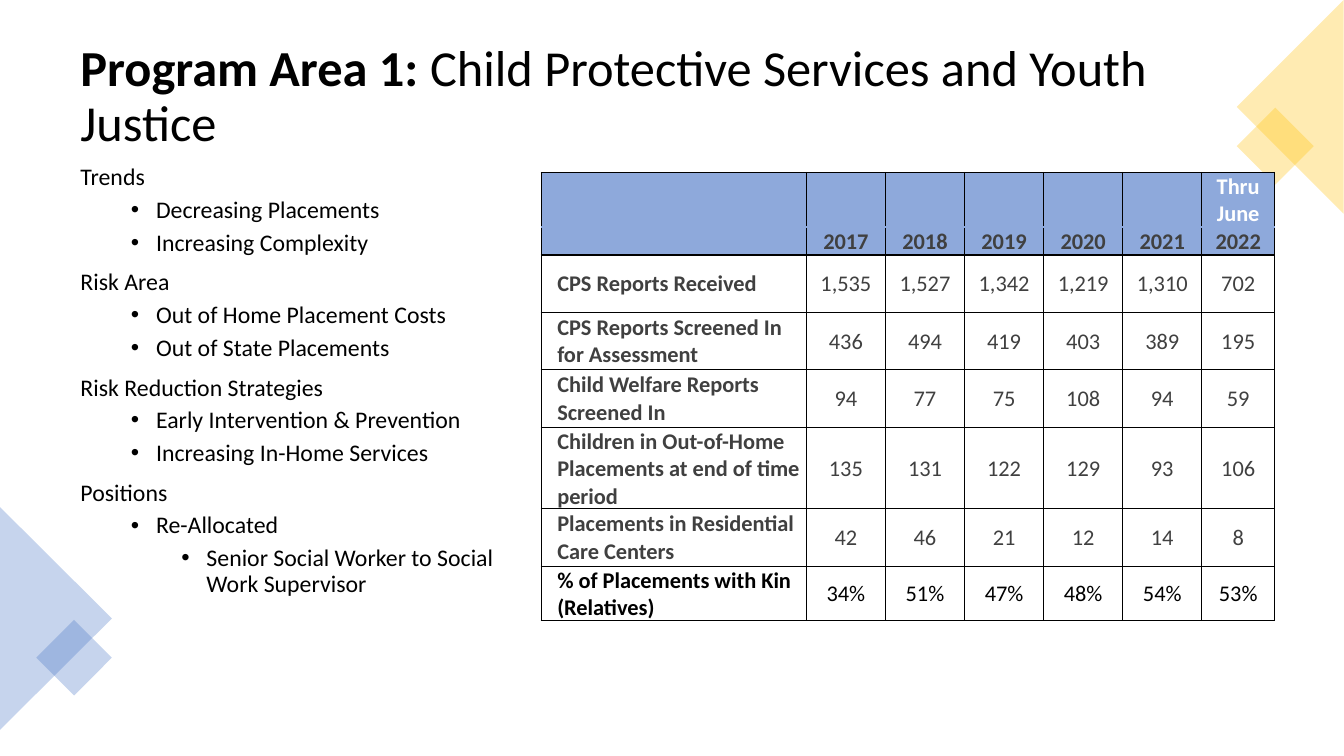
import pptx
import pptx.dml.color
import pptx.enum.shapes
import pptx.enum.text
import pptx.oxml
import pptx.oxml.ns
import pptx.util
from lxml import etree

Pt = pptx.util.Pt
Align = pptx.enum.text.PP_ALIGN
Anchor = pptx.enum.text.MSO_ANCHOR
Preset = pptx.enum.shapes.MSO_SHAPE
qn = pptx.oxml.ns.qn

BLACK, GREY, WHITE = "000000", "404040", "FFFFFF"
BLUE, GOLD, HEADER = "4472C4", "FFC000", "8EA9DB"

OUTLINE = [
    (0, "Trends"),
    (1, "Decreasing Placements"),
    (1, "Increasing Complexity"),
    (0, "Risk Area"),
    (1, "Out of Home Placement Costs"),
    (1, "Out of State Placements"),
    (0, "Risk Reduction Strategies"),
    (1, "Early Intervention & Prevention"),
    (1, "Increasing In-Home Services"),
    (0, "Positions"),
    (1, "Re-Allocated"),
    (2, "Senior Social Worker to Social Work Supervisor"),
]

TABLE_ROWS = [
    ["", "", "", "", "", "", "Thru June"],
    ["", "2017", "2018", "2019", "2020", "2021", "2022"],
    ["CPS Reports Received", "1,535", "1,527", "1,342", "1,219", "1,310", "702"],
    ["CPS Reports Screened In for Assessment", "436", "494", "419", "403", "389", "195"],
    ["Child Welfare Reports Screened In", "94", "77", "75", "108", "94", "59"],
    ["Children in Out-of-Home Placements at end of time period",
     "135", "131", "122", "129", "93", "106"],
    ["Placements in Residential Care Centers", "42", "46", "21", "12", "14", "8"],
    ["% of Placements with Kin (Relatives)", "34%", "51%", "47%", "48%", "54%", "53%"],
]
COLUMN_WIDTHS = [189.4] + [56.5] * 5 + [52]
ROW_HEIGHTS = [36, 19, 41, 41, 41, 54, 41, 29]
HEADER_ROWS = 2


def color(hex_value):
    return pptx.dml.color.RGBColor.from_string(hex_value)


def apply(target, **values):
    for name, value in values.items():
        setattr(target, name, value)


class SlideBuilder:
    font_name = "Calibri"

    def __init__(self, slide):
        self.slide = slide

    def run(self, paragraph, text, size, hex_value=BLACK, bold=False):
        run = paragraph.add_run()
        run.text = text
        apply(run.font, name=self.font_name, size=Pt(size), bold=bold)
        run.font.color.rgb = color(hex_value)

    def text_frame(self, left, top, width, height, anchor):
        box = self.slide.shapes.add_textbox(Pt(left), Pt(top), Pt(width), Pt(height))
        apply(box.text_frame, word_wrap=True, vertical_anchor=anchor)
        return box.text_frame

    def title(self, bounds, lead, rest):
        paragraph = self.text_frame(*bounds, Anchor.MIDDLE).paragraphs[0]
        paragraph.line_spacing = 0.9
        self.run(paragraph, lead, 36, bold=True)
        self.run(paragraph, rest, 36)

    def outline(self, bounds, items):
        frame = self.text_frame(*bounds, Anchor.TOP)
        for index, (level, text) in enumerate(items):
            paragraph = frame.add_paragraph() if index else frame.paragraphs[0]
            apply(paragraph, level=level, line_spacing=0.9,
                  space_before=Pt(5 if level else 10))
            if level:
                properties = paragraph._p.get_or_add_pPr()
                properties.set("marL", str(Pt(18 + 36 * level)))
                properties.set("indent", str(-Pt(18)))
                etree.SubElement(properties, qn("a:buFont")).set("typeface", "Arial")
                etree.SubElement(properties, qn("a:buChar")).set("char", "•")
            self.run(paragraph, text, 17)

    def corner_shape(self, preset, bounds, rotation, hex_value):
        """Draw a borderless, 30% opaque decoration."""
        shape = self.slide.shapes.add_shape(preset, *map(Pt, bounds))
        shape.rotation = rotation
        shape.shadow.inherit = False
        shape.line.fill.background()
        shape.fill.solid()
        shape.fill.fore_color.rgb = color(hex_value)
        fill_color = shape._element.spPr.find(".//" + qn("a:srgbClr"))
        etree.SubElement(fill_color, qn("a:alpha")).set("val", "30000")

    def border(self, cell, side, hex_value, width):
        line = etree.SubElement(cell._tc.get_or_add_tcPr(), qn("a:ln" + side))
        line.set("w", str(Pt(width)))
        fill = etree.SubElement(line, qn("a:solidFill"))
        etree.SubElement(fill, qn("a:srgbClr")).set("val", hex_value)

    def table(self, left, top, rows, widths, heights):
        frame = self.slide.shapes.add_table(
            len(rows), len(widths), Pt(left), Pt(top), Pt(sum(widths)), Pt(sum(heights)))
        table = frame.table
        apply(table, first_row=False, horz_banding=False)
        for column, width in zip(table.columns, widths):
            column.width = Pt(width)
        for row, height in zip(table.rows, heights):
            row.height = Pt(height)

        last_row, last_column = len(rows), len(widths)

        def vertical_edge(index):
            return BLACK, 1 if index in (0, last_column) else 0.5

        def horizontal_edge(index):
            heavy = index <= HEADER_ROWS or index == last_row
            return HEADER if index == 1 else BLACK, 1 if heavy else 0.5

        for i, texts in enumerate(rows):
            for j, text in enumerate(texts):
                cell = table.cell(i, j)
                self.border(cell, "L", *vertical_edge(j))
                self.border(cell, "R", *vertical_edge(j + 1))
                self.border(cell, "T", *horizontal_edge(i))
                self.border(cell, "B", *horizontal_edge(i + 1))
                self.fill_cell(cell, text, i, j, i == last_row - 1)

    def fill_cell(self, cell, text, i, j, is_last):
        is_header, is_label = i < HEADER_ROWS, j == 0
        apply(cell, margin_left=Pt(11.5 if is_label else 0.7), margin_right=Pt(0.7),
              margin_top=Pt(0.7), margin_bottom=Pt(0),
              vertical_anchor=Anchor.BOTTOM if is_header else Anchor.MIDDLE)
        if is_header:
            cell.fill.solid()
            cell.fill.fore_color.rgb = color(HEADER)
        else:
            cell.fill.background()
        paragraph = cell.text_frame.paragraphs[0]
        paragraph.alignment = Align.LEFT if is_label else Align.CENTER
        if text:
            hex_value = WHITE if i == 0 else BLACK if is_last else GREY
            self.run(paragraph, text, 16, hex_value, bold=is_header or is_label)
        else:
            etree.SubElement(paragraph._p, qn("a:endParaRPr")).set("sz", "1600")


def main():
    presentation = pptx.Presentation()
    apply(presentation, slide_width=Pt(960), slide_height=Pt(540))
    builder = SlideBuilder(presentation.slides.add_slide(presentation.slide_layouts[6]))

    builder.title((50.4, 25.2, 859, 89.3), "Program Area 1:",
                  " Child Protective Services and Youth Justice")
    builder.outline((50.4, 114.5, 315.4, 425.5), OUTLINE)

    builder.corner_shape(Preset.ISOSCELES_TRIANGLE, (-39.6, 401.8, 159.1, 79.9), 90, BLUE)
    builder.corner_shape(Preset.RECTANGLE, (33.8, 450.7, 38.2, 38.2), 45, BLUE)
    builder.corner_shape(Preset.RECTANGLE, (891.4, 85, 38.9, 38.9), 45, GOLD)
    builder.corner_shape(Preset.ISOSCELES_TRIANGLE, (845.3, 38.2, 152.6, 76.3), 270, GOLD)

    builder.table(386.6, 123.1, TABLE_ROWS, COLUMN_WIDTHS, ROW_HEIGHTS)
    presentation.save("out.pptx")


if __name__ == "__main__":
    main()
